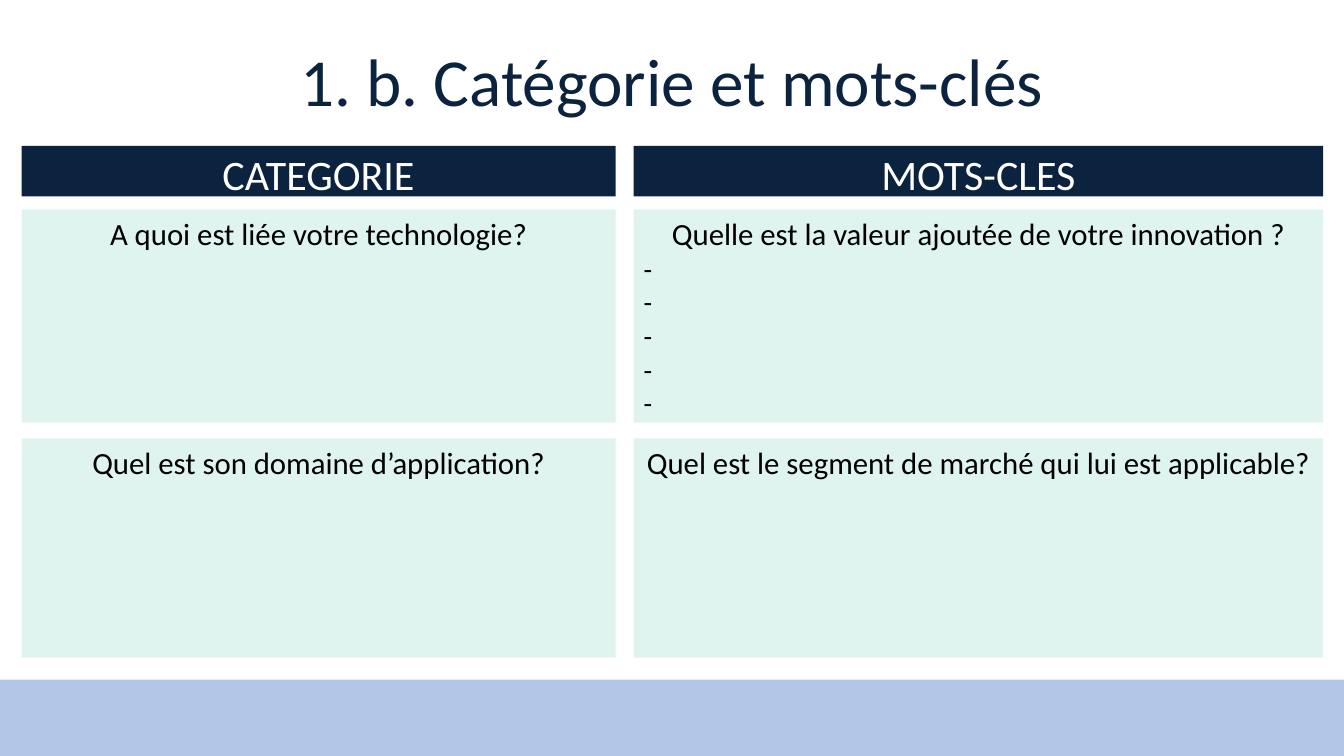
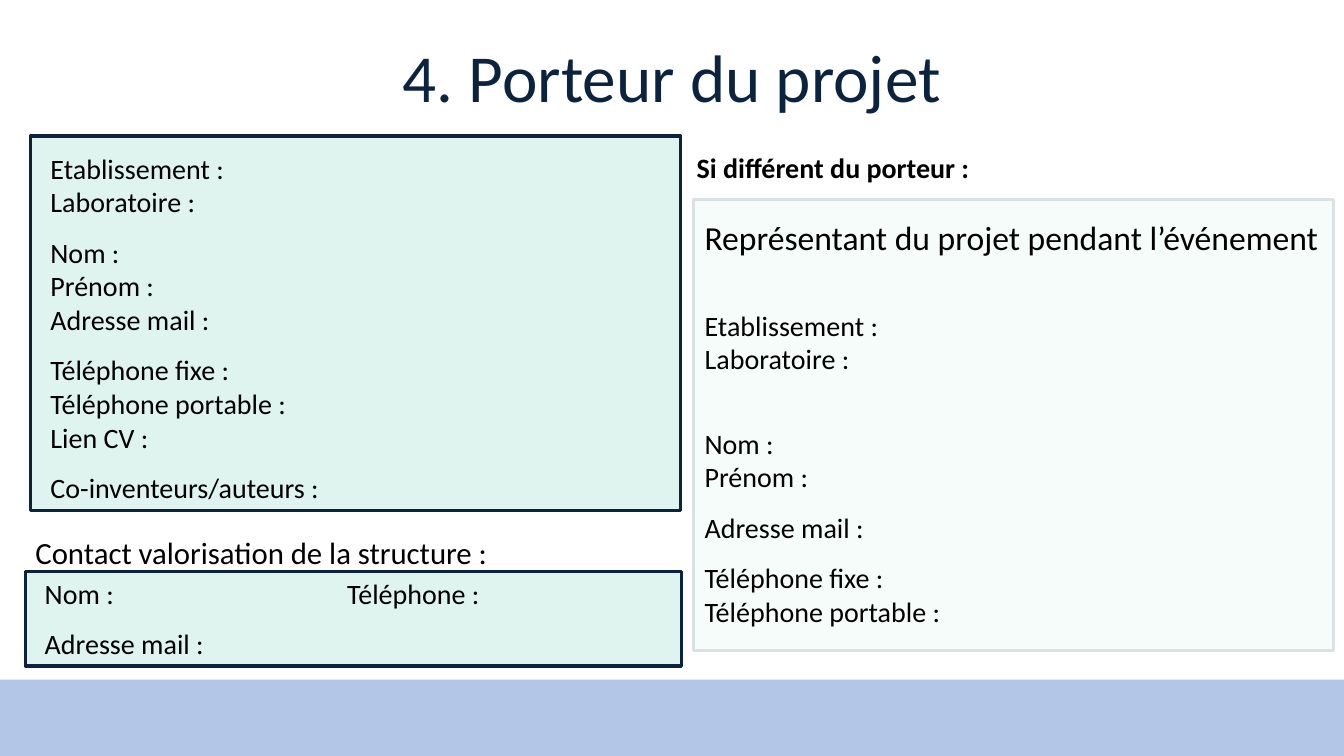
"""Build the category and project-holder form slides."""
from lxml.etree import SubElement
from pptx import Presentation
from pptx.dml.color import RGBColor
from pptx.enum.shapes import MSO_SHAPE as SHAPE
from pptx.enum.text import MSO_ANCHOR as ANCHOR, MSO_AUTO_SIZE as AUTO, PP_ALIGN as ALIGN
from pptx.oxml.ns import qn
from pptx.util import Inches, Pt

FONT = "Calibri"
NAVY, MINT, PALE, GREY = "0C2340", "E0F4EF", "F6FCFA", "D9E1E2"
BLACK, WHITE, BAND = "000000", "FFFFFF", "8FAADC"
BLANK_LINE = 24.4

prs = Presentation()
prs.slide_width, prs.slide_height = Inches(13.33), Inches(7.5)
COL, ROW = prs.slide_width / 100, prs.slide_height / 100


def rgb(code):
    """Turn a hex string into a colour."""
    return RGBColor.from_string(code)


def box(s, area, paras, fill=None, line=None, color=BLACK, align=ALIGN.LEFT,
        anchor=ANCHOR.TOP, inset=(0.1, 0.05), bold=False):
    """Add a text panel; area is in percent, paras hold text, size, spacing, space before."""
    x, y, w, h = area
    frame = int(x * COL), int(y * ROW), int(w * COL), int(h * ROW)
    if fill:
        sp = s.shapes.add_shape(SHAPE.RECTANGLE, *frame)
        sp.shadow.inherit = False
        sp.fill.solid()
        sp.fill.fore_color.rgb = rgb(fill)
        if line:
            sp.line.color.rgb = rgb(line)
            sp.line.width = Pt(2.25)
        else:
            sp.line.fill.background()
    else:
        sp = s.shapes.add_textbox(*frame)
    tf = sp.text_frame
    tf.word_wrap = True
    tf.vertical_anchor = anchor
    tf.margin_left, tf.margin_top = (Inches(v) for v in inset)
    for i, (text, size, spacing, before) in enumerate(paras):
        p = tf.add_paragraph() if i else tf.paragraphs[0]
        p.alignment = ALIGN.LEFT if i else align
        p.line_spacing = spacing
        p.space_before = Pt(before)
        r = p.add_run()
        r.text = text
        r.font.name, r.font.size, r.font.bold = FONT, Pt(size), bold
        r.font.color.rgb = rgb(color)
    return sp


layout = prs.slide_layouts[5]
slides = []
for title, top in (("1. b. Catégorie et mots-clés", 1.5), ("4. Porteur du projet", 1)):
    s = prs.slides.add_slide(layout)
    sp = s.shapes.title
    sp.left, sp.top = 0, int(top * ROW)
    sp.width, sp.height = prs.slide_width, int(19.3 * ROW)
    tf = sp.text_frame
    tf.auto_size = AUTO.NONE
    tf.vertical_anchor = ANCHOR.MIDDLE
    p = tf.paragraphs[0]
    p.alignment = ALIGN.CENTER
    p.line_spacing = 0.9
    r = p.add_run()
    r.text = title
    r.font.name, r.font.size = FONT, Pt(48)
    r.font.color.rgb = rgb(NAVY)
    slides.append(s)
category, holder = slides

band = box(category, (0, 89.9, 100, 10.1), [], fill=BAND)
color = next(band.element.iter(qn("a:srgbClr")))
SubElement(color, qn("a:alpha"), val="67000")
layout.shapes.element.insert(2, band.element)

columns = [
    (1.6, 44.2, "CATEGORIE",
     "A quoi est liée votre technologie?", [],
     "Quel est son domaine d’application?"),
    (47.15, 51.3, "MOTS-CLES",
     "Quelle est la valeur ajoutée de votre innovation ?", ["-"] * 5,
     "Quel est le segment de marché qui lui est applicable?"),
]
for x, w, heading, question, answers, second in columns:
    box(category, (x, 19.3, w, 6.7), [(heading, 30, 1, 0)], fill=NAVY, color=WHITE,
        align=ALIGN.CENTER, anchor=ANCHOR.MIDDLE, inset=(0.1, 0.1))
    paras = [(question, 22, 1, 0)] + [(a, 20, 1, 0) for a in answers]
    for y, h, content in ((27.7, 28.2, paras), (58, 29, [(second, 22, 1, 0)])):
        box(category, (x, y, w, h), content, fill=MINT, align=ALIGN.CENTER)

box(holder, (2.25, 18, 48.4, 49.5), [
    ("Etablissement :", 20, 1, 0),
    ("Laboratoire :", 20, 1, 0),
    ("Nom :", 20, 1.5, 0),
    ("Prénom :", 20, 1, 0),
    ("Adresse mail :", 20, 1, 0),
    ("Téléphone fixe :", 20, 1.5, 0),
    ("Téléphone portable :", 20, 1, 0),
    ("Lien CV :", 20, 1, 0),
    ("Co-inventeurs/auteurs :", 20, 1.5, 0),
], fill=MINT, line=NAVY, inset=(0.2, 0.15))

box(holder, (51.1, 19.3, 45.2, 5.9), [("Si différent du porteur :", 20, 1, 0)], bold=True)
box(holder, (51.6, 26.4, 47.6, 59.7), [
    ("Représentant du projet pendant l’événement", 24, 1, 0),
    ("Etablissement :", 20, 1.5, BLANK_LINE),
    ("Laboratoire :", 20, 1, 0),
    ("Nom :", 20, 1.5, BLANK_LINE),
    ("Prénom :", 20, 1, 0),
    ("Adresse mail :", 20, 1.5, 0),
    ("Téléphone fixe :", 20, 1.5, 0),
    ("Téléphone portable :", 20, 1, 0),
], fill=PALE, line=GREY, inset=(0.11, 0.17))

box(holder, (1.9, 67.5, 36.8, 8), [("Contact valorisation de la structure :", 22, 1.5, 0)])
contact = box(holder, (1.9, 75.6, 48.8, 12.5), [
    ("Nom :\tTéléphone :", 20, 1, 0),
    ("Adresse mail :", 20, 1.5, 0),
], fill=MINT, line=NAVY, inset=(0.19, 0.05))
pPr = contact.text_frame.paragraphs[0]._p.get_or_add_pPr()
tabs = SubElement(pPr, qn("a:tabLst"))
SubElement(tabs, qn("a:tab"), pos=str(Inches(3)), algn="l")

prs.save("out.pptx")
